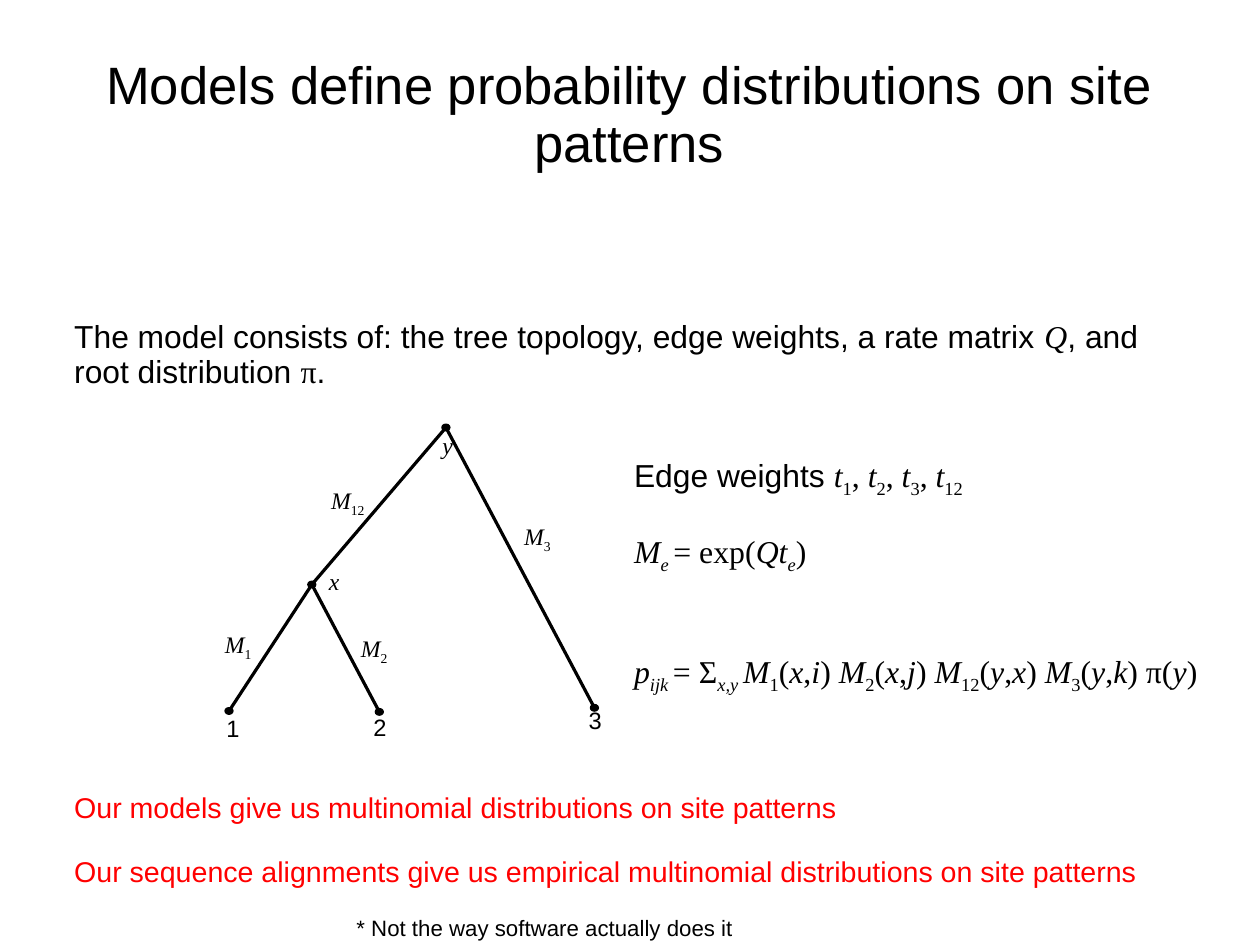
from dataclasses import dataclass
from lxml import etree
from pptx import Presentation, util as u
from pptx.dml.color import RGBColor
from pptx.enum import shapes, text


@dataclass(frozen=True)
class Theme:
    ink: RGBColor = RGBColor(0, 0, 0)
    red: RGBColor = RGBColor(255, 0, 0)
    title: float = 33.1
    body: float = 20
    claim: float = 18
    label: float = 14.9
    note: float = 14
    edge: float = 2
    rim: float = 0.75


THEME = Theme()
SERIF = "Times New Roman"
STYLES = {
    "a": {"name": "Arial"},
    "r": {"name": SERIF},
    "i": {"name": SERIF, "italic": True},
    "s": {"name": SERIF},
    "z": {"name": SERIF, "italic": True},
}
SUBS = ("s", "z")

NODES = {
    "y": (9.91, 9.5),
    "x": (6.93, 12.99),
    "1": (5.09, 15.8),
    "2": (8.43, 15.82),
    "3": (13.21, 15.73),
}
EDGES = [("1", "x"), ("x", "2"), ("x", "y"), ("y", "3")]
LABELS = [
    ("a:1", 4.78, 15.8, 0.81),
    ("a:2", 8.05, 15.77, 0.81),
    ("a:3", 12.83, 15.62, 0.81),
    ("i:M|s:1", 4.75, 13.87, 1.14),
    ("i:M|s:2", 7.77, 13.97, 1.14),
    ("i:M|s:12", 7.11, 10.67, 1.32),
    ("i:M|s:3", 11.4, 11.48, 1.14),
    ("i:x", 7.06, 12.52, 0.74),
    ("i:y", 9.58, 9.5, 0.74),
]
INTRO = ("a:The model consists of: the tree topology, edge weights, a rate matrix "
         "|i:Q|a:, and root distribution |r:π|a:.")
MATHS = [
    ("a:Edge weights |i:t|s:1|r:, |i:t|s:2|r:, |i:t|s:3|r:, |i:t|s:12", 0),
    ("i:M|z:e |r:= exp(|i:Qt|z:e|r:)", 22.5),
    ("i:p|z:ijk |r:= Σ|z:x,y |i:M|s:1|r:(|i:x|r:,|i:i|r:) "
     "|i:M|s:2|r:(|i:x|r:,|i:j|r:) |i:M|s:12|r:(|i:y|r:,|i:x|r:) "
     "|i:M|s:3|r:(|i:y|r:,|i:k|r:) π(|i:y|r:)", 50),
]
CLAIMS = [
    ("a:Our models give us multinomial distributions on site patterns", 0),
    ("a:Our sequence alignments give us empirical multinomial distributions"
     " on site patterns", 20),
]


def apply(target, values):
    for name, value in values.items():
        setattr(target, name, value)


def add_runs(para, markup, size, color):
    for part in markup.split("|"):
        key, _, words = part.partition(":")
        run = para.add_run()
        run.text = words
        apply(run.font, {"size": u.Pt(size), **STYLES[key]})
        run.font.color.rgb = color
        if key in SUBS:
            run.font._element.set("baseline", "-25000")


def add_text(slide, box, paras, size, color=THEME.ink, frame=None, align=None):
    shape = slide.shapes.add_textbox(*map(u.Cm, box))
    body = shape.text_frame
    apply(body, {"word_wrap": True, **(frame or {})})
    for n, (markup, gap) in enumerate(paras):
        para = body.add_paragraph() if n else body.paragraphs[0]
        apply(para, {"line_spacing": 0.93, "space_before": u.Pt(gap),
                     "alignment": align})
        add_runs(para, markup, size, color)


def add_edge(slide, start, end):
    line = slide.shapes.add_connector(
        shapes.MSO_CONNECTOR.STRAIGHT, *map(u.Cm, start + end))
    line.line.color.rgb = THEME.ink
    line.line.width = u.Pt(THEME.edge)
    props = line._element.spPr
    etree.SubElement(
        props, "{http://schemas.openxmlformats.org/drawingml/2006/main}effectLst")


def add_node(slide, spot, wide=0.18, high=0.15):
    left, top = spot[0] - wide / 2, spot[1] - high / 2
    dot = slide.shapes.add_shape(
        shapes.MSO_SHAPE.OVAL, *map(u.Cm, (left, top, wide, high)))
    dot.shadow.inherit = False
    dot.fill.solid()
    dot.fill.fore_color.rgb = THEME.ink
    dot.line.color.rgb = THEME.ink
    dot.line.width = u.Pt(THEME.rim)


def add_tree(slide):
    for start, end in EDGES:
        add_edge(slide, NODES[start], NODES[end])
    for markup, left, top, wide in LABELS:
        add_text(slide, (left, top, wide, 0.84), [(markup, 0)], THEME.label,
                 frame={"word_wrap": False})
    for spot in NODES.values():
        add_node(slide, spot)


def main():
    deck = Presentation()
    apply(deck, {"slide_width": u.Cm(28), "slide_height": u.Cm(21)})
    slide = deck.slides.add_slide(deck.slide_layouts[6])
    sides = ("left", "right", "top", "bottom")
    flush = {f"margin_{side}": 0 for side in sides}
    add_text(slide, (1.4, 0.84, 25.17, 3.48),
             [("a:Models define probability distributions on site patterns", 0)],
             THEME.title, align=text.PP_ALIGN.CENTER,
             frame={**flush, "vertical_anchor": text.MSO_ANCHOR.MIDDLE})
    add_text(slide, (1.4, 6.99, 25.17, 1.85), [(INTRO, 0)], THEME.body)
    add_tree(slide)
    add_text(slide, (13.84, 10.01, 13.61, 6.88), MATHS, THEME.body)
    add_text(slide, (1.4, 17.5, 24.33, 2.41), CLAIMS, THEME.claim, THEME.red,
             frame={"word_wrap": False})
    add_text(slide, (7.67, 20.24, 16.41, 0.81),
             [("a:* Not the way software actually does it", 0)], THEME.note)
    deck.save("out.pptx")


if __name__ == "__main__":
    main()
